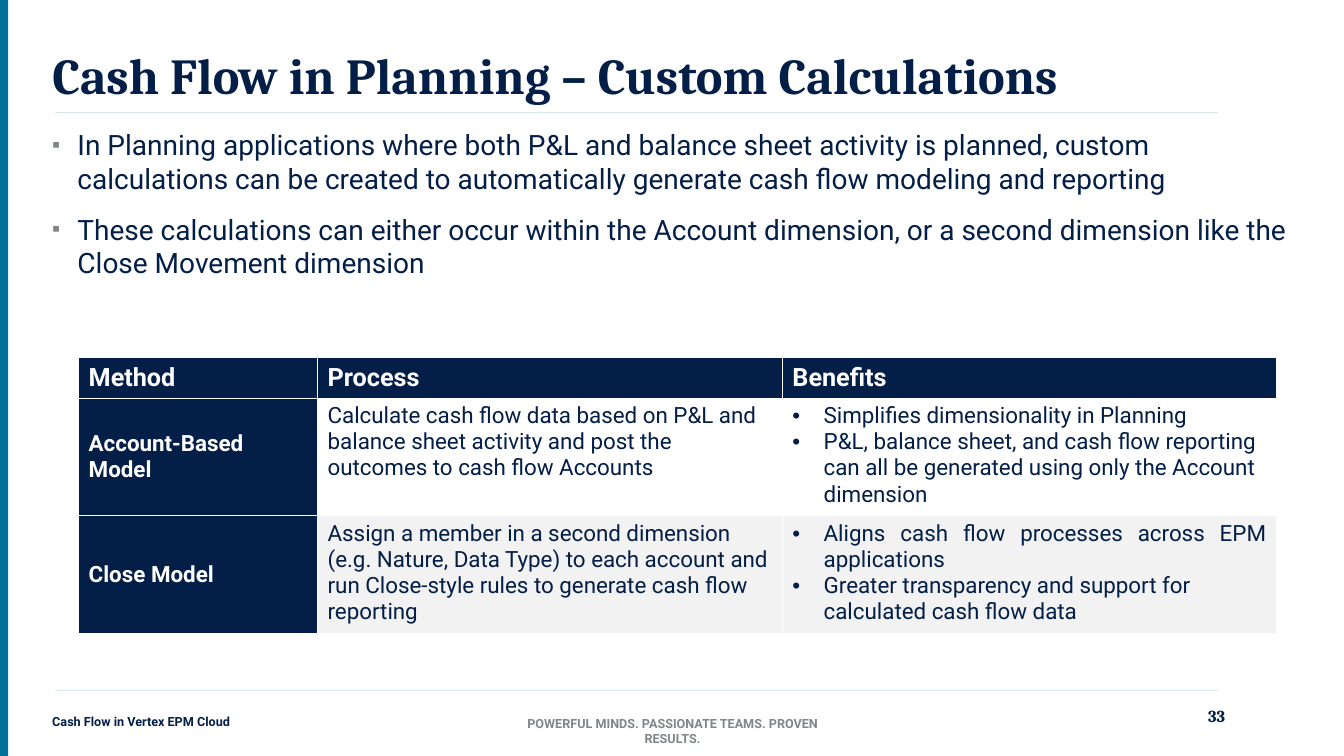
"""Build the slide on custom cash flow calculations in planning."""
from lxml import etree
from pptx import Presentation
from pptx.dml.color import RGBColor
from pptx.enum import shapes, text
from pptx.oxml import ns
from pptx.util import Inches, Pt

NAVY, GRAY, WHITE, PALE, TEAL, RULE = "031E47", "7F8688", "FFFFFF", "F2F2F2", "007198", "D7E9ED"
LEFT, CENTER, RIGHT, JUSTIFY = (
    text.PP_ALIGN.LEFT, text.PP_ALIGN.CENTER, text.PP_ALIGN.RIGHT, text.PP_ALIGN.JUSTIFY)
MIDDLE, TOP = text.MSO_ANCHOR.MIDDLE, text.MSO_ANCHOR.TOP


def color(value):
    return RGBColor.from_string(value)


def write(paragraph, words, size, ink=NAVY, bold=False, name="Roboto",
          bullet=None, indent=0, bullet_color=None, bullet_size=None, **layout):
    if bullet:
        properties = paragraph._p.get_or_add_pPr()
        properties.set("marL", str(Inches(indent)))
        properties.set("indent", str(-Inches(indent)))
        if bullet_color:
            tint = etree.SubElement(properties, ns.qn("a:buClr"))
            etree.SubElement(tint, ns.qn("a:srgbClr"), val=bullet_color)
        if bullet_size:
            etree.SubElement(properties, ns.qn("a:buSzPct"), val=str(bullet_size * 1000))
        etree.SubElement(properties, ns.qn("a:buFont"), typeface="Arial")
        etree.SubElement(properties, ns.qn("a:buChar"), char=bullet)
    for key, value in layout.items():
        setattr(paragraph, key, value)
    run = paragraph.add_run()
    run.text = words
    for key, value in {"size": Pt(size), "bold": bold, "name": name}.items():
        setattr(run.font, key, value)
    run.font.color.rgb = color(ink)


presentation = Presentation()
presentation.slide_width, presentation.slide_height = Inches(13.33), Inches(7.5)
slide = presentation.slides.add_slide(presentation.slide_layouts[6])

side_bar = slide.shapes.add_shape(
    shapes.MSO_SHAPE.RECTANGLE, 0, 0, Inches(0.08), Inches(7.5))
side_bar.shadow.inherit = False
side_bar.fill.solid()
side_bar.fill.fore_color.rgb = color(TEAL)
side_bar.line.fill.background()

for y in (1.11, 6.85):
    rule = slide.shapes.add_connector(
        shapes.MSO_CONNECTOR.STRAIGHT, Inches(0.55), Inches(y), Inches(12.08), Inches(y))
    rule.line.color.rgb = color(RULE)
    rule.line.width = Pt(0.5)
    etree.SubElement(rule._element.spPr, ns.qn("a:effectLst"))

square = dict(size=20, bullet="▪", indent=0.25, bullet_color=GRAY, bullet_size=82, space_after=Pt(6))
text_boxes = [
    ((0.42, 0.44, 12.78, 0.68), MIDDLE,
     ["Cash Flow in Planning – Custom Calculations"],
     dict(size=36, bold=True, name="Cambria", line_spacing=0.9)),
    ((0.42, 1.22, 12.5, 5.52), TOP,
     ["In Planning applications where both P&L and balance sheet activity is planned, custom "
      "calculations can be created to automatically generate cash flow modeling and reporting",
      "These calculations can either occur within the Account dimension, or a second dimension "
      "like the Close Movement dimension"],
     square),
    ((0.42, 7.05, 2.74, 0.26), TOP, ["Cash Flow in Vertex EPM Cloud"],
     dict(size=9, bold=True, line_spacing=0.9)),
    ((4.92, 7.05, 3.5, 0.25), TOP, ["POWERFUL MINDS. PASSIONATE TEAMS. PROVEN RESULTS."],
     dict(size=9, ink=GRAY, bold=True, alignment=CENTER)),
    ((11.58, 6.95, 0.67, 0.3), TOP, ["33"],
     dict(size=12, bold=True, name="Cambria", alignment=RIGHT)),
]
for place, anchor, lines, style in text_boxes:
    frame = slide.shapes.add_textbox(*map(Inches, place)).text_frame
    frame.word_wrap = True
    frame.vertical_anchor = anchor
    for index, words in enumerate(lines):
        paragraph = frame.add_paragraph() if index else frame.paragraphs[0]
        if index:
            paragraph.space_before = Pt(6)
        write(paragraph, words, **style)

column_widths = [2.37, 4.61, 4.9]
row_heights = [0.4, 1.13, 1.13]
rows = [
    [["Method"], ["Process"], ["Benefits"]],
    [["Account-Based Model"],
     ["Calculate cash flow data based on P&L and balance sheet activity and post the "
      "outcomes to cash flow Accounts"],
     ["Simplifies dimensionality in Planning",
      "P&L, balance sheet, and cash flow reporting can all be generated using only the "
      "Account dimension"]],
    [["Close Model"],
     ["Assign a member in a second dimension (e.g. Nature, Data Type) to each account and "
      "run Close-style rules to generate cash flow reporting"],
     ["Aligns cash flow processes across EPM applications",
      "Greater transparency and support for calculated cash flow data"]],
]
table = slide.shapes.add_table(
    3, 3, Inches(0.78), Inches(3.55),
    Inches(sum(column_widths)), Inches(sum(row_heights))).table
for column, width in zip(table.columns, column_widths):
    column.width = Inches(width)
for row, height in zip(table.rows, row_heights):
    row.height = Inches(height)

for row_index, row in enumerate(rows):
    for column_index, lines in enumerate(row):
        cell = table.cell(row_index, column_index)
        heading = row_index == 0 or column_index == 0
        cell.fill.solid()
        cell.fill.fore_color.rgb = color(NAVY if heading else (WHITE, PALE)[row_index - 1])
        cell.vertical_anchor = MIDDLE if row_index and heading else TOP
        for index, words in enumerate(lines):
            paragraph = cell.text_frame.add_paragraph() if index else cell.text_frame.paragraphs[0]
            justified = (row_index, column_index, index) == (2, 2, 0)
            write(paragraph, words, 16 if row_index else 18, WHITE if heading else NAVY, heading,
                  bullet="•" if row_index and column_index == 2 else None, indent=0.31,
                  alignment=JUSTIFY if justified else LEFT)

presentation.save("out.pptx")
